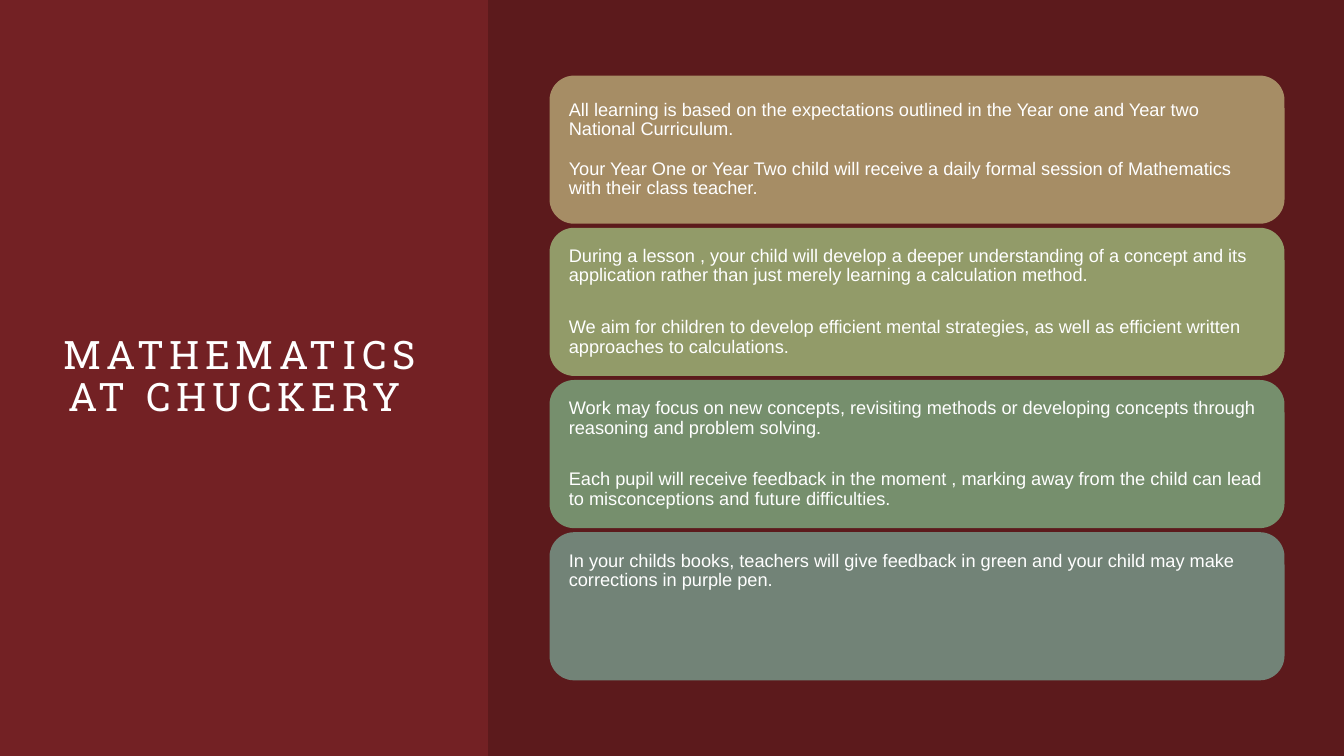
from dataclasses import dataclass

from lxml import etree
from pptx import Presentation, util as u
from pptx.dml.color import RGBColor
from pptx.enum import shapes, text
from pptx.oxml.ns import qn


@dataclass(frozen=True)
class Theme:
    background: str = "732124"
    panel: str = "000000"
    panel_alpha: int = 20
    ink: str = "FFFFFF"
    cards: tuple = ("A68D65", "929B69", "768F6D", "728377")
    title_font: str = "Roboto Slab"
    title_size: int = 28
    title_tracking: int = 4
    body_font: str = "Arial"
    body_size: int = 13
    leading: float = 0.9


THEME = Theme()
WIDTH, HEIGHT = 13.33, 7.5
PANEL_LEFT = 4.84
TITLE_BOX = (0.59, 1.18, 3.63, 5.13)
CARDS_BOX = (5.45, 0.75, 7.29, 6)
CARD_GAP = 0.04
CARD_INSET = 0.12

TITLE = "MATHEMATICS AT CHUCKERY "
# Each card: its paragraphs, the points between them, and its vertical anchor.
CARDS = [
    (["All learning is based on the expectations outlined in the Year one and "
      "Year two National Curriculum.",
      "Your Year One or Year Two child will receive a daily formal session of "
      "Mathematics with their class teacher."], 14, text.MSO_ANCHOR.MIDDLE),
    (["During a lesson , your child will develop a deeper understanding of a "
      "concept and its application rather than just merely learning a "
      "calculation method.",
      "We aim for children to develop efficient mental strategies, as well as "
      "efficient written approaches to calculations."], 23, text.MSO_ANCHOR.MIDDLE),
    (["Work may focus on new concepts, revisiting methods or developing "
      "concepts through reasoning and problem solving.",
      "Each pupil will receive feedback in the moment , marking away from the "
      "child can lead to misconceptions and future difficulties."], 23,
     text.MSO_ANCHOR.MIDDLE),
    (["In your childs books, teachers will give feedback in green and your "
      "child may make corrections in purple pen."], 0, text.MSO_ANCHOR.TOP),
]


def inches(box):
    return [u.Inches(length) for length in box]


def add_block(slide, preset, box, color):
    block = slide.shapes.add_shape(preset, *inches(box))
    block.shadow.inherit = False
    block.fill.solid()
    block.fill.fore_color.rgb = RGBColor.from_string(color)
    block.line.fill.background()
    return block


def set_frame(frame, inset, anchor):
    frame.word_wrap = True
    frame.auto_size = text.MSO_AUTO_SIZE.NONE
    frame.vertical_anchor = anchor
    frame.margin_left = frame.margin_right = u.Inches(inset)
    frame.margin_top = frame.margin_bottom = u.Inches(inset)


def add_run(paragraph, words, font_name, size, align):
    paragraph.alignment = align
    paragraph.line_spacing = THEME.leading
    run = paragraph.add_run()
    run.text = words
    run.font.name = font_name
    run.font.size = u.Pt(size)
    run.font.color.rgb = RGBColor.from_string(THEME.ink)
    return run


def place_title(slide, box):
    title = slide.shapes.title
    title.left, title.top, title.width, title.height = inches(box)
    set_frame(title.text_frame, 0, text.MSO_ANCHOR.MIDDLE)
    run = add_run(title.text_frame.paragraphs[0], TITLE, THEME.title_font,
                  THEME.title_size, text.PP_ALIGN.CENTER)
    run.font._element.set("spc", str(THEME.title_tracking * 100))


def add_panel(slide, box):
    """Darken the box with a translucent rectangle."""
    panel = add_block(slide, shapes.MSO_SHAPE.RECTANGLE, box, THEME.panel)
    color = panel.fill._xPr.find(qn("a:solidFill"))[0]
    etree.SubElement(color, qn("a:alpha"), val=str(THEME.panel_alpha * 1000))


def add_card(slide, box, color, paragraphs, spacing, anchor):
    card = add_block(slide, shapes.MSO_SHAPE.ROUNDED_RECTANGLE, box, color)
    frame = card.text_frame
    set_frame(frame, CARD_INSET, anchor)
    for index, words in enumerate(paragraphs):
        paragraph = frame.add_paragraph() if index else frame.paragraphs[0]
        paragraph.space_before = u.Pt(spacing if index else 0)
        add_run(paragraph, words, THEME.body_font, THEME.body_size,
                text.PP_ALIGN.LEFT)


def add_card_stack(slide, box):
    left, top, width, height = box
    pitch = (height + CARD_GAP) / len(CARDS)
    for row, (color, card) in enumerate(zip(THEME.cards, CARDS)):
        card_box = (left, top + row * pitch, width, pitch - CARD_GAP)
        add_card(slide, card_box, color, *card)


def main():
    deck = Presentation()
    deck.slide_width, deck.slide_height = inches((WIDTH, HEIGHT))
    slide = deck.slides.add_slide(deck.slide_layouts.get_by_name("Title Only"))
    slide.background.fill.solid()
    slide.background.fill.fore_color.rgb = RGBColor.from_string(THEME.background)
    place_title(slide, TITLE_BOX)
    add_panel(slide, (PANEL_LEFT, 0, WIDTH - PANEL_LEFT, HEIGHT))
    add_card_stack(slide, CARDS_BOX)
    deck.save("out.pptx")


if __name__ == "__main__":
    main()
